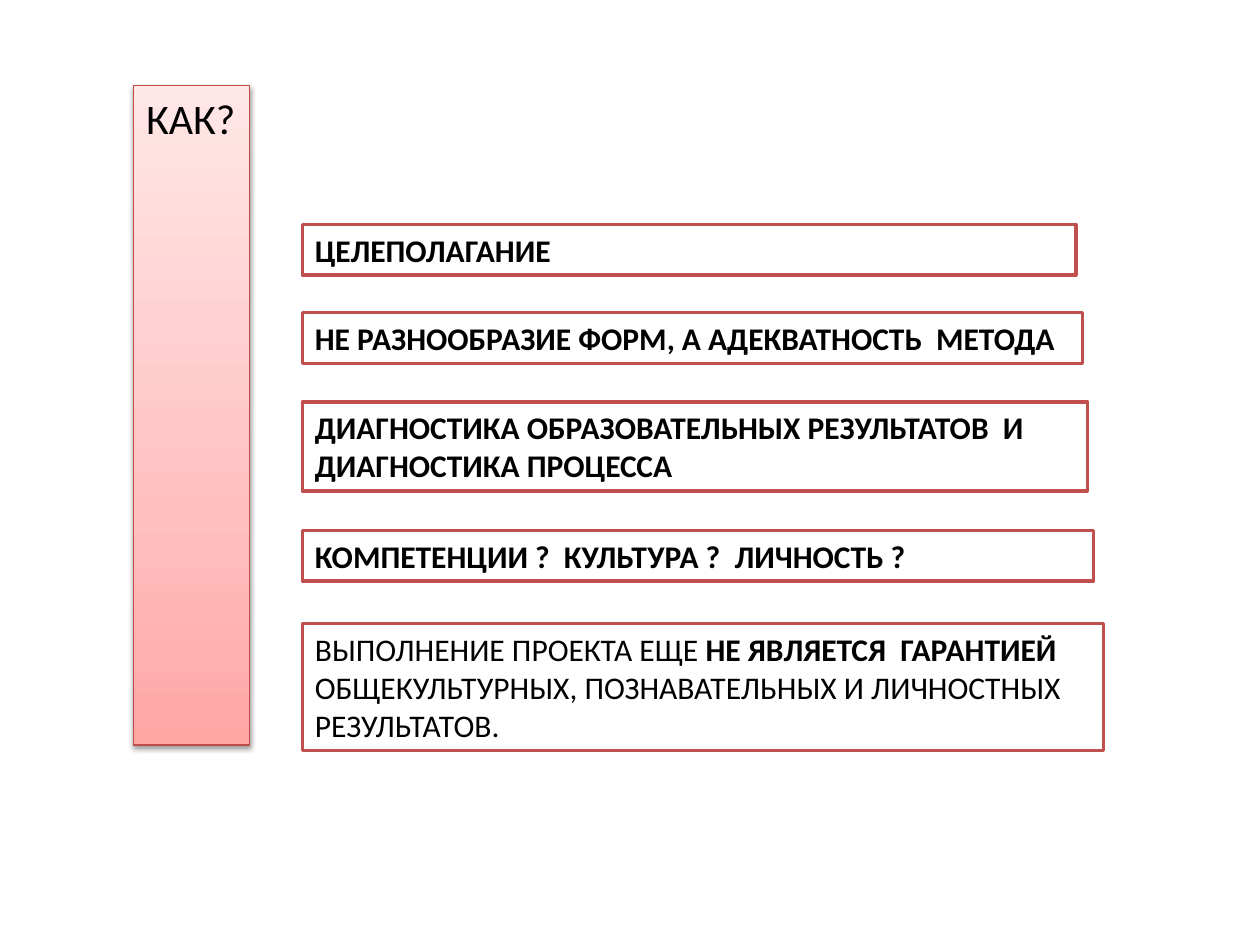
"""Build the slide that answers the question of how with five framed theses."""
from copy import deepcopy

from lxml.etree import SubElement as Sub
from pptx import Presentation
from pptx.dml.color import RGBColor as Rgb
from pptx.enum.text import MSO_ANCHOR as Anchor, MSO_AUTO_SIZE as Fit, PP_ALIGN as Align
from pptx.oxml.ns import qn
from pptx.util import Pt

HEX = {"ink": "000000", "paper": "FFFFFF", "frame": "C0504D", "edge": "BF4C48"}
FADE = [(0, "FFA6A5"), (0.35, "FFC0BF"), (1, "FFE7E7")]
SHADE = {"blurRad": Pt(3.1), "dist": Pt(1.6), "dir": 5400000, "rotWithShape": 0}

HEAD = [[("КАК?", False)]]
BOXES = [
    (128.2, 442, [[("ЦЕЛЕПОЛАГАНИЕ", True)]]),
    (178.6, 445.7, [[("НЕ РАЗНООБРАЗИЕ ФОРМ, А АДЕКВАТНОСТЬ  МЕТОДА", True)]]),
    (229.7, 448.6, [
        [("ДИАГНОСТИКА ОБРАЗОВАТЕЛЬНЫХ РЕЗУЛЬТАТОВ  И", True)],
        [("ДИАГНОСТИКА ПРОЦЕССА", True)],
    ]),
    (303.1, 452.2, [[("КОМПЕТЕНЦИИ ?  КУЛЬТУРА ?  ЛИЧНОСТЬ ?", True)]]),
    (356.4, 457.9, [
        [("ВЫПОЛНЕНИЕ ПРОЕКТА ЕЩЕ ", False), ("НЕ ЯВЛЯЕТСЯ  ГАРАНТИЕЙ", True)],
        [("ОБЩЕКУЛЬТУРНЫХ, ПОЗНАВАТЕЛЬНЫХ И ЛИЧНОСТНЫХ", False)],
        [("РЕЗУЛЬТАТОВ.", False)],
    ]),
]
LEFT, ROW, PAD = 172.8, 21.8, 7.2


def tint(name):
    return Rgb.from_string(HEX[name])


def put(item, spec):
    for key, value in spec.items():
        setattr(item, key, value)


def place(shape, left, top, width, height):
    put(shape, {"left": Pt(left), "top": Pt(top), "width": Pt(width), "height": Pt(height)})


def write(shape, lines, size, wrap):
    frame = shape.text_frame
    put(frame, {"word_wrap": wrap, "auto_size": Fit.SHAPE_TO_FIT_TEXT,
                "vertical_anchor": Anchor.TOP})
    for num, line in enumerate(lines):
        para = frame.add_paragraph() if num else frame.paragraphs[0]
        para.alignment = Align.LEFT
        for text, bold in line:
            run = para.add_run()
            run.text = text
            put(run.font, {"name": "Calibri", "size": Pt(size), "bold": bold})
            run.font.color.rgb = tint("ink")


def rim(shape, name, width):
    shape.line.color.rgb = tint(name)
    shape.line.width = Pt(width)


def fade(shape):
    fill = shape.fill
    fill.gradient()
    fill.gradient_angle = 90
    stops = shape.element.spPr.find(".//" + qn("a:gsLst"))
    stops.insert(1, deepcopy(stops[0]))
    for stop, (pos, code) in zip(fill.gradient_stops, FADE):
        stop.position = pos
        stop.color.rgb = Rgb.from_string(code)


def shade(shape):
    group = Sub(shape.element.spPr, qn("a:effectLst"))
    outer = Sub(group, qn("a:outerShdw"), {key: str(val) for key, val in SHADE.items()})
    color = Sub(outer, qn("a:srgbClr"), val=HEX["ink"])
    Sub(color, qn("a:alpha"), val="38000")


def main():
    deck = Presentation()
    put(deck, {"slide_width": Pt(720), "slide_height": Pt(540)})
    slide = deck.slides.add_slide(deck.slide_layouts[5])

    title = slide.shapes.title
    place(title, 76.3, 49, 66.2, 36.4)
    fade(title)
    rim(title, "edge", 0.75)
    shade(title)
    write(title, HEAD, 24, False)

    for top, width, lines in BOXES:
        box = slide.shapes.add_textbox(0, 0, 0, 0)
        place(box, LEFT, top, width, PAD + ROW * len(lines))
        box.fill.solid()
        box.fill.fore_color.rgb = tint("paper")
        rim(box, "frame", 2)
        write(box, lines, 18, True)

    deck.save("out.pptx")


if __name__ == "__main__":
    main()
